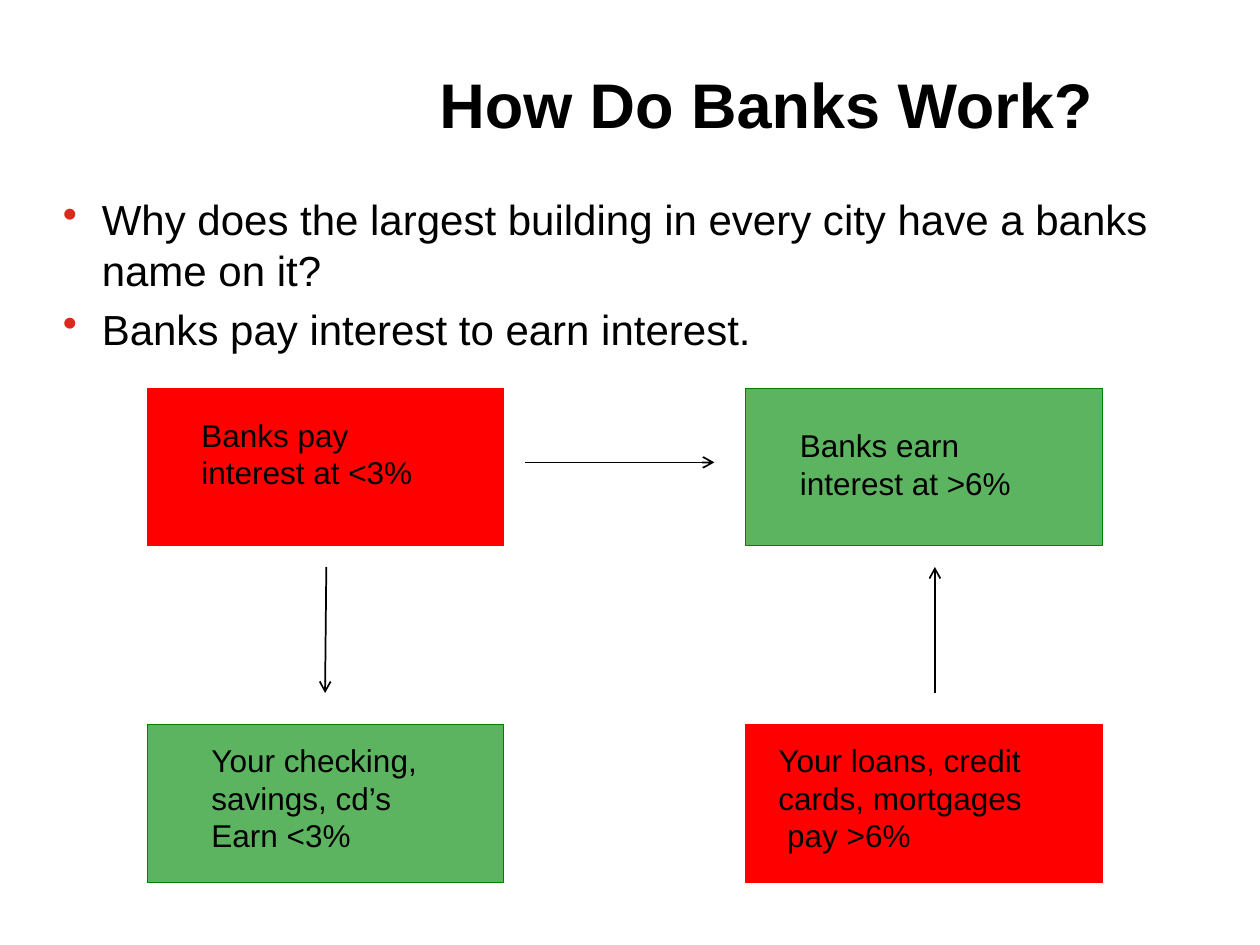
import pptx
import pptx.util
import pptx.dml.color
import pptx.enum.shapes
import pptx.enum.text
import pptx.oxml
import pptx.oxml.ns
from dataclasses import dataclass

Inches = pptx.util.Inches
Pt = pptx.util.Pt


@dataclass(frozen=True)
class Theme:
    font: str = "Arial"
    ink: str = "000000"
    red: str = "FF0000"
    green: str = "5DB460"
    edge: str = "008000"
    dot: str = "DC291E"
    title: int = 36
    body: int = 24
    label: int = 18


THEME = Theme()


def color(code):
    return pptx.dml.color.RGBColor.from_string(code)


def add_sub(parent, tag, **attrs):
    node = pptx.oxml.parse_xml(f"<{tag} {pptx.oxml.ns.nsdecls('a')}/>")
    for key, value in attrs.items():
        node.set(key, value)
    parent.append(node)
    return node


def add_dot(para):
    """Give a paragraph a hanging, coloured bullet."""
    props = para._p.get_or_add_pPr()
    props.set("marL", str(Inches(0.31)))
    props.set("indent", str(Inches(-0.31)))
    add_sub(add_sub(props, "a:buClr"), "a:srgbClr", val=THEME.dot)
    add_sub(props, "a:buChar", char="•")


def add_text(slide, left, top, width, height, lines, size,
             bold=False, center=False, dots=False):
    box = slide.shapes.add_textbox(
        Inches(left), Inches(top), Inches(width), Inches(height))
    frame = box.text_frame
    frame.word_wrap = True
    frame.text = "\n".join(lines)
    for num, para in enumerate(frame.paragraphs):
        if dots:
            add_dot(para)
            if num:
                para.space_before = Pt(5)
        if center:
            para.alignment = pptx.enum.text.PP_ALIGN.CENTER
        for run in para.runs:
            run.font.name = THEME.font
            run.font.size = Pt(size)
            run.font.bold = bold
            run.font.color.rgb = color(THEME.ink)


def add_box(slide, left, top, fill, edge):
    box = slide.shapes.add_shape(
        pptx.enum.shapes.MSO_SHAPE.RECTANGLE,
        Inches(left), Inches(top), Inches(2.83), Inches(1.25))
    box.shadow.inherit = False
    box.fill.solid()
    box.fill.fore_color.rgb = color(fill)
    box.line.color.rgb = color(edge)
    box.line.width = Pt(0.5)


def add_arrow(slide, x1, y1, x2, y2):
    arrow = slide.shapes.add_connector(
        pptx.enum.shapes.MSO_CONNECTOR.STRAIGHT,
        Inches(x1), Inches(y1), Inches(x2), Inches(y2))
    arrow.line.color.rgb = color(THEME.ink)
    arrow.line.width = Pt(1)
    add_sub(arrow.line._get_or_add_ln(), "a:tailEnd", type="arrow")
    add_sub(arrow._element.spPr, "a:effectLst")


def main():
    deck = pptx.Presentation()
    deck.slide_width, deck.slide_height = Inches(10), Inches(7.5)
    slide = deck.slides.add_slide(deck.slide_layouts[6])

    # Title and bullets
    add_text(slide, 1.99, 0.47, 8.18, 0.71, ["How Do Banks Work?"],
             THEME.title, bold=True, center=True)
    add_text(slide, 0.4, 1.49, 9.1, 1.39, [
        "Why does the largest building in every city have a banks name on it?",
        "Banks pay interest to earn interest.",
    ], THEME.body, dots=True)

    # Boxes: red and green alternate over a two by two grid
    pairs = [(THEME.red, THEME.red), (THEME.green, THEME.edge)]
    for row, top in enumerate((3.08, 5.75)):
        for col, left in enumerate((1.17, 5.92)):
            add_box(slide, left, top, *pairs[(row + col) % 2])

    # Labels on the boxes
    labels = [
        (1.5, 3.25, 2.25, 0.7, ["Banks pay interest at <3%"]),
        (6.25, 3.33, 2.25, 0.7, ["Banks earn interest at >6%"]),
        (1.58, 5.83, 2, 1, ["Your checking, savings, cd’s", "Earn <3%"]),
        (6.08, 5.83, 2.42, 1,
         ["Your loans, credit", "cards, mortgages", " pay >6%"]),
    ]
    for label in labels:
        add_text(slide, *label, THEME.label)

    # Arrows between the boxes
    add_arrow(slide, 4.17, 3.67, 5.67, 3.67)
    add_arrow(slide, 2.59, 4.5, 2.58, 5.5)
    add_arrow(slide, 7.42, 5.5, 7.42, 4.5)

    deck.save("out.pptx")


if __name__ == "__main__":
    main()
